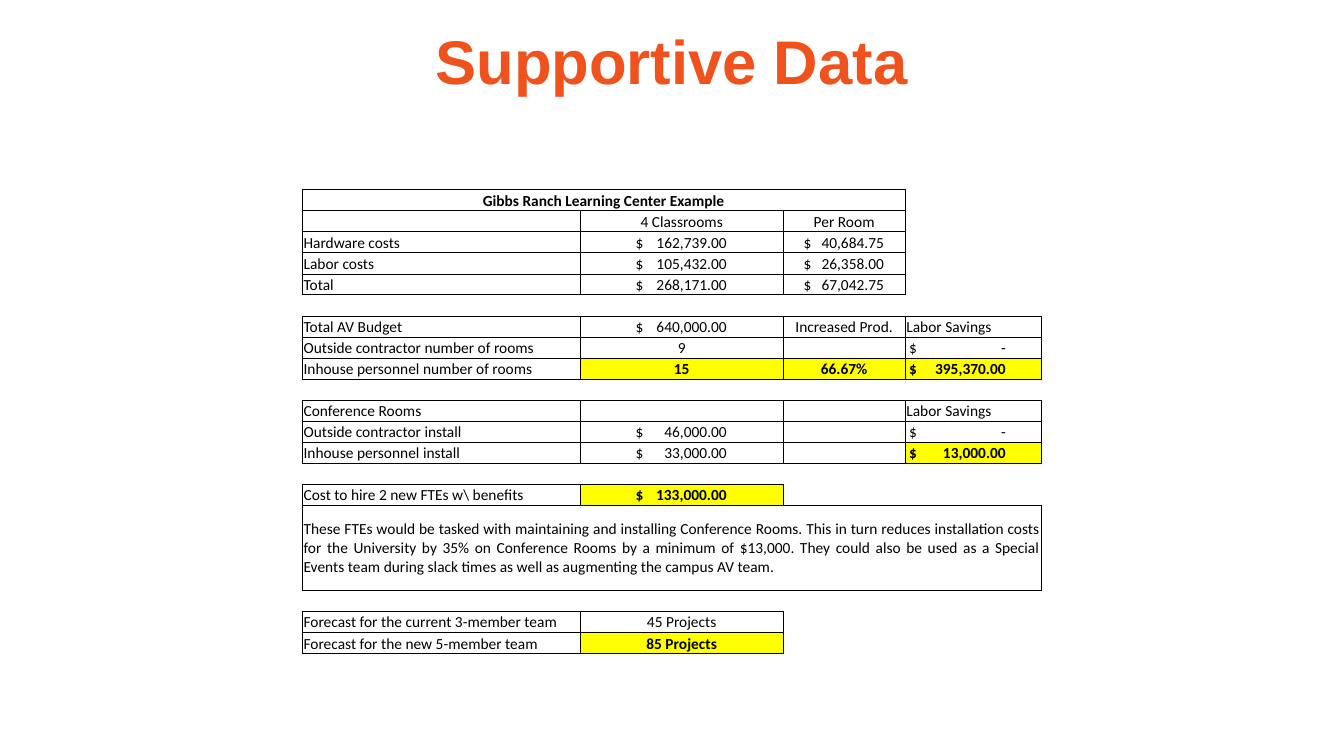
from dataclasses import dataclass

from lxml.etree import SubElement
from pptx import Presentation
from pptx.dml.color import RGBColor
from pptx.enum.text import MSO_ANCHOR, PP_ALIGN
from pptx.oxml.ns import qn
from pptx.util import Cm, Pt


@dataclass(frozen=True)
class Theme:
    title_font: str = "Arial"
    body_font: str = "Calibri"
    title_size: int = 44
    body_size: int = 11
    title: str = "F0521E"
    ink: str = "000000"
    highlight: str = "FFFF00"
    thin: float = 0.5
    thick: float = 1


class Key(str):
    """A highlighted result."""


THEME = Theme()
NO_STYLE = "{2D5ABB26-0587-4C30-8999-92F81FD0307C}"
COLUMNS = (7.0, 5.12, 3.07, 3.44)
ROW, NOTE_ROW = 0.53, 2.14
# Per column: where the dollar sign starts and where the amount ends, in cm
AMOUNT_STOPS = {1: (1.4, 3.7), 2: (0.51, 2.54), 3: (0.1, 2.54)}
NOTE = (
    "These FTEs would be tasked with maintaining and installing Conference Rooms. "
    "This in turn reduces installation costs for the University by 35% on Conference "
    "Rooms by a minimum of $13,000. They could also be used as a Special Events team "
    "during slack times as well as augmenting the campus AV team."
)
HEADING = "Gibbs Ranch Learning Center Example"
# Rows list only their bordered cells; an empty row separates two blocks
ROWS = [
    [HEADING, "", ""],
    ["", "4 Classrooms", "Per Room"],
    ["Hardware costs", "$ 162,739.00", "$ 40,684.75"],
    ["Labor costs", "$ 105,432.00", "$ 26,358.00"],
    ["Total", "$ 268,171.00", "$ 67,042.75"],
    [],
    ["Total AV Budget", "$ 640,000.00", "Increased Prod.", "Labor Savings"],
    ["Outside contractor number of rooms", "9", "", "$ -"],
    ["Inhouse personnel number of rooms", Key("15"), Key("66.67%"), Key("$ 395,370.00")],
    [],
    ["Conference Rooms", "", "", "Labor Savings"],
    ["Outside contractor install", "$ 46,000.00", "", "$ -"],
    ["Inhouse personnel install", "$ 33,000.00", "", Key("$ 13,000.00")],
    [],
    ["Cost to hire 2 new FTEs w\\ benefits", Key("$ 133,000.00")],
    [NOTE, "", "", ""],
    [],
    ["Forecast for the current 3-member team", "45 Projects"],
    ["Forecast for the new 5-member team", Key("85 Projects")],
]
MERGED = (HEADING, NOTE)
COST_ROWS = 5
FORECAST_ROW = len(ROWS) - 2


def style_run(r, font, size, color, bold):
    r.font.name, r.font.size, r.font.bold = font, Pt(size), bold
    r.font.color.rgb = RGBColor.from_string(color)


def boxed(row, col):
    return 0 <= row < len(ROWS) and 0 <= col < len(ROWS[row])


def edge_width(row, col, neighbour):
    """Width of the line between a cell and its neighbour, or None."""
    ends = ((row, col), neighbour)
    if not any(boxed(*end) for end in ends):
        return None
    in_costs = [boxed(*end) and end[0] < COST_ROWS for end in ends]
    return THEME.thick if in_costs[0] != in_costs[1] else THEME.thin


def draw_borders(cell, row, col, last_col):
    tc_pr = cell._tc.get_or_add_tcPr()
    edges = {
        "a:lnL": (col, (row, col - 1)),
        "a:lnR": (last_col, (row, last_col + 1)),
        "a:lnT": (col, (row - 1, col)),
        "a:lnB": (col, (row + 1, col)),
    }
    for tag, (own_col, neighbour) in edges.items():
        width = edge_width(row, own_col, neighbour)
        ln = SubElement(tc_pr, qn(tag))
        if width is None:
            SubElement(ln, qn("a:noFill"))
            continue
        ln.set("w", str(Pt(width)))
        fill = SubElement(ln, qn("a:solidFill"))
        SubElement(fill, qn("a:srgbClr"), val=THEME.ink)


def write_cell(cell, value, row, col):
    cell.margin_left = cell.margin_right = cell.margin_top = Cm(0.03)
    cell.margin_bottom = 0
    low = col == 3 or row >= FORECAST_ROW
    cell.vertical_anchor = MSO_ANCHOR.BOTTOM if low else MSO_ANCHOR.MIDDLE
    p = cell.text_frame.paragraphs[0]
    if not value:
        p._p.get_or_add_endParaRPr().set("sz", str(THEME.body_size * 100))
        return
    if value.startswith("$"):
        start, end = AMOUNT_STOPS[col]
        cell.margin_left = Cm(start)
        tabs = SubElement(p._p.get_or_add_pPr(), qn("a:tabLst"))
        SubElement(tabs, qn("a:tab"), pos=str(Cm(end - start)), algn="r")
        p.text = value.replace(" ", "\t")
    else:
        p.text = value
        if value == NOTE:
            p.alignment = PP_ALIGN.JUSTIFY
        elif col in (1, 2) or value == HEADING:
            p.alignment = PP_ALIGN.CENTER
    bold = isinstance(value, Key) or value == HEADING
    for r in p.runs:
        style_run(r, THEME.body_font, THEME.body_size, THEME.ink, bold)


def add_title(s, left, top, width, height):
    tf = s.shapes.add_textbox(Cm(left), Cm(top), Cm(width), Cm(height)).text_frame
    tf.word_wrap = True
    tf.vertical_anchor = MSO_ANCHOR.TOP
    tf.margin_top = Cm(0.25)
    p = tf.paragraphs[0]
    p.text = "Supportive Data"
    p.alignment, p.line_spacing = PP_ALIGN.CENTER, 0.9
    style_run(p.runs[0], THEME.title_font, THEME.title_size, THEME.title, True)


def add_cost_table(s, left, top):
    heights = [NOTE_ROW if NOTE in row else ROW for row in ROWS]
    frame = s.shapes.add_table(len(ROWS), len(COLUMNS), Cm(left), Cm(top),
                               Cm(sum(COLUMNS)), Cm(sum(heights)))
    table = frame.table
    table.first_row = table.horz_banding = False
    table._tbl.tblPr.find(qn("a:tableStyleId")).text = NO_STYLE
    for column, width in zip(table.columns, COLUMNS):
        column.width = Cm(width)
    for i, (values, height) in enumerate(zip(ROWS, heights)):
        table.rows[i].height = Cm(height)
        merged = bool(values) and values[0] in MERGED
        if merged:
            table.cell(i, 0).merge(table.cell(i, len(values) - 1))
        for j in range(len(COLUMNS)):
            cell = table.cell(i, j)
            value = values[j] if boxed(i, j) else ""
            write_cell(cell, value, i, j)
            if not cell.is_spanned:
                draw_borders(cell, i, j, len(values) - 1 if merged and j == 0 else j)
            if isinstance(value, Key):
                cell.fill.solid()
                cell.fill.fore_color.rgb = RGBColor.from_string(THEME.highlight)
            else:
                cell.fill.background()


def main():
    prs = Presentation()
    prs.slide_width, prs.slide_height = Cm(33.87), Cm(19.05)
    s = prs.slides.add_slide(prs.slide_layouts[6])
    add_title(s, 2.33, 0.53, 29.21, 3.68)
    add_cost_table(s, 7.62, 4.78)
    prs.save("out.pptx")


if __name__ == "__main__":
    main()
